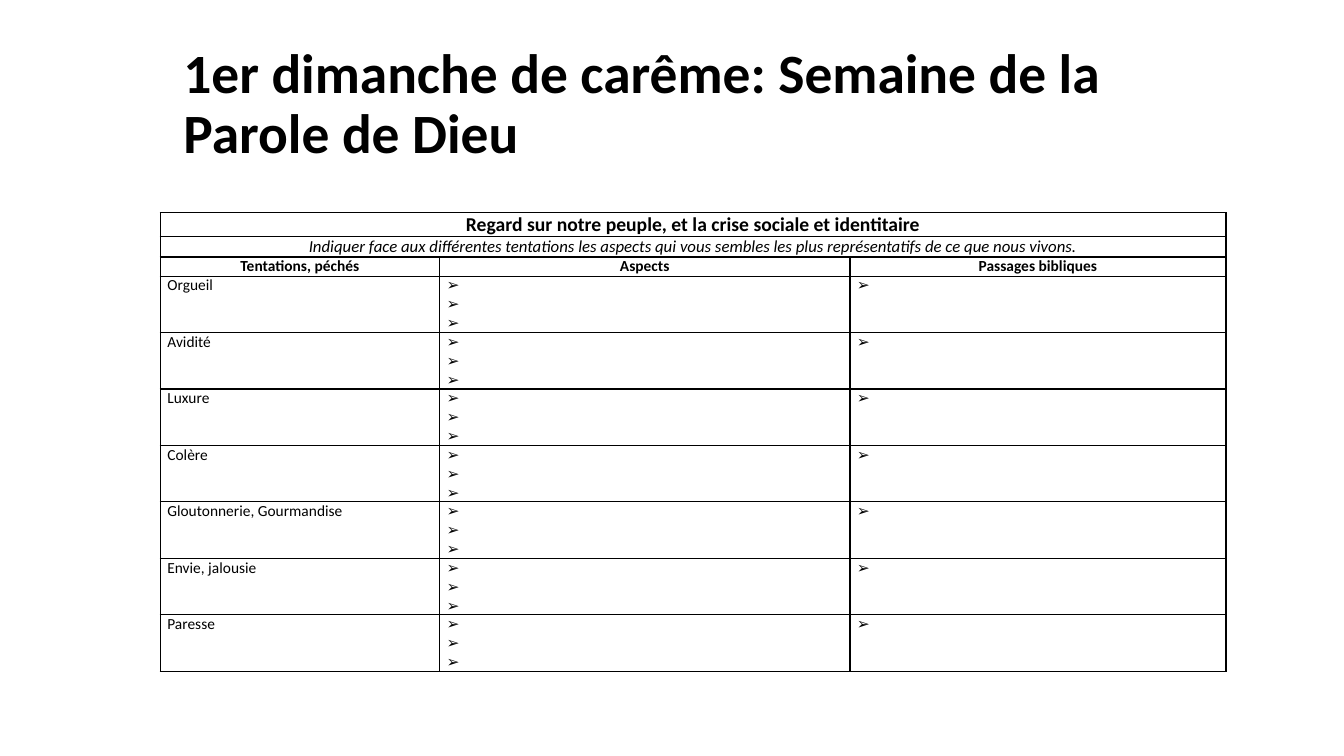
"""Build the Lent slide: a title above a table of temptations to fill in."""
from lxml.etree import SubElement
from pptx import Presentation
from pptx.dml.color import RGBColor
from pptx.enum.text import MSO_ANCHOR, PP_ALIGN
from pptx.oxml.ns import qn
from pptx.util import Inches, Pt

COLORS = {"ink": "000000", "paper": "FFFFFF"}
FONT = "Calibri"
BANNERS = [
    ("Regard sur notre peuple, et la crise sociale et identitaire", 14, True, False),
    ("Indiquer face aux différentes tentations les aspects qui vous sembles "
     "les plus représentatifs de ce que nous vivons.", 12, False, True),
]
HEADINGS = ["Tentations, péchés", "Aspects", "Passages bibliques"]
TEMPTATIONS = ["Orgueil", "Avidité", "Luxure", "Colère",
               "Gloutonnerie, Gourmandise", "Envie, jalousie", "Paresse"]
COLUMN_WIDTHS = [2.77, 4.07, 3.73]
ROW_HEIGHTS = [0.24, 0.2, 0.19] + [0.56] * len(TEMPTATIONS)
BULLET_COUNTS = {1: 3, 2: 1}


def write(para, text, size, bold=False, italic=False, align=PP_ALIGN.LEFT):
    """Put formatted text into a paragraph."""
    para.text = text
    para.alignment = align
    for span in para.runs:
        span.font.name = FONT
        span.font.size = Pt(size)
        span.font.bold = bold
        span.font.italic = italic
        span.font.color.rgb = RGBColor.from_string(COLORS["ink"])


def add_bullet(para):
    """Give a paragraph an arrow bullet with a hanging indent."""
    properties = para._p.get_or_add_pPr()
    properties.set("marL", str(Inches(0.25)))
    properties.set("indent", str(-Inches(0.25)))
    SubElement(properties, qn("a:buFont"), typeface=FONT)
    SubElement(properties, qn("a:buChar"), char="➢")


deck = Presentation()
deck.slide_width = Inches(13.33)
deck.slide_height = Inches(7.5)
page = deck.slides.add_slide(deck.slide_layouts[6])

title = page.shapes.add_textbox(Inches(1.72), Inches(0.51), Inches(10.45), Inches(1.08))
title.text_frame.word_wrap = True
title.text_frame.vertical_anchor = MSO_ANCHOR.MIDDLE
title_para = title.text_frame.paragraphs[0]
write(title_para, "1er dimanche de carême: Semaine de la Parole de Dieu", 39.6, bold=True)
title_para.line_spacing = 0.9

table = page.shapes.add_table(
    len(ROW_HEIGHTS), len(COLUMN_WIDTHS), Inches(1.59), Inches(2.11),
    Inches(sum(COLUMN_WIDTHS)), Inches(sum(ROW_HEIGHTS))).table
table.first_row = False
table.horz_banding = False
for column, width in zip(table.columns, COLUMN_WIDTHS):
    column.width = Inches(width)
for row, height in zip(table.rows, ROW_HEIGHTS):
    row.height = Inches(height)

for cell in table.iter_cells():
    cell.margin_left = cell.margin_right = Inches(0.07)
    cell.margin_top = cell.margin_bottom = 0
    cell.text_frame.paragraphs[0].font.size = Pt(11)
    for side in ("lnL", "lnR", "lnT", "lnB"):
        border = SubElement(cell._tc.get_or_add_tcPr(), qn(f"a:{side}"), w=str(Pt(1)))
        SubElement(SubElement(border, qn("a:solidFill")), qn("a:srgbClr"), val=COLORS["ink"])
    cell.fill.solid()
    cell.fill.fore_color.rgb = RGBColor.from_string(COLORS["paper"])

for row_index, (text, size, bold, italic) in enumerate(BANNERS):
    banner = table.cell(row_index, 0)
    banner.merge(table.cell(row_index, len(COLUMN_WIDTHS) - 1))
    write(banner.text_frame.paragraphs[0], text, size, bold, italic, PP_ALIGN.CENTER)

for column_index, heading in enumerate(HEADINGS):
    heading_cell = table.cell(len(BANNERS), column_index)
    write(heading_cell.text_frame.paragraphs[0], heading, 11, bold=True, align=PP_ALIGN.CENTER)

for row_index, temptation in enumerate(TEMPTATIONS, start=len(BANNERS) + 1):
    name_cell = table.cell(row_index, 0)
    write(name_cell.text_frame.paragraphs[0], temptation, 11, align=PP_ALIGN.JUSTIFY)
    for column_index, count in BULLET_COUNTS.items():
        frame = table.cell(row_index, column_index).text_frame
        frame.text = "\n".join([" "] * count)
        for para in frame.paragraphs:
            write(para, " ", 11)
            add_bullet(para)

deck.save("out.pptx")
